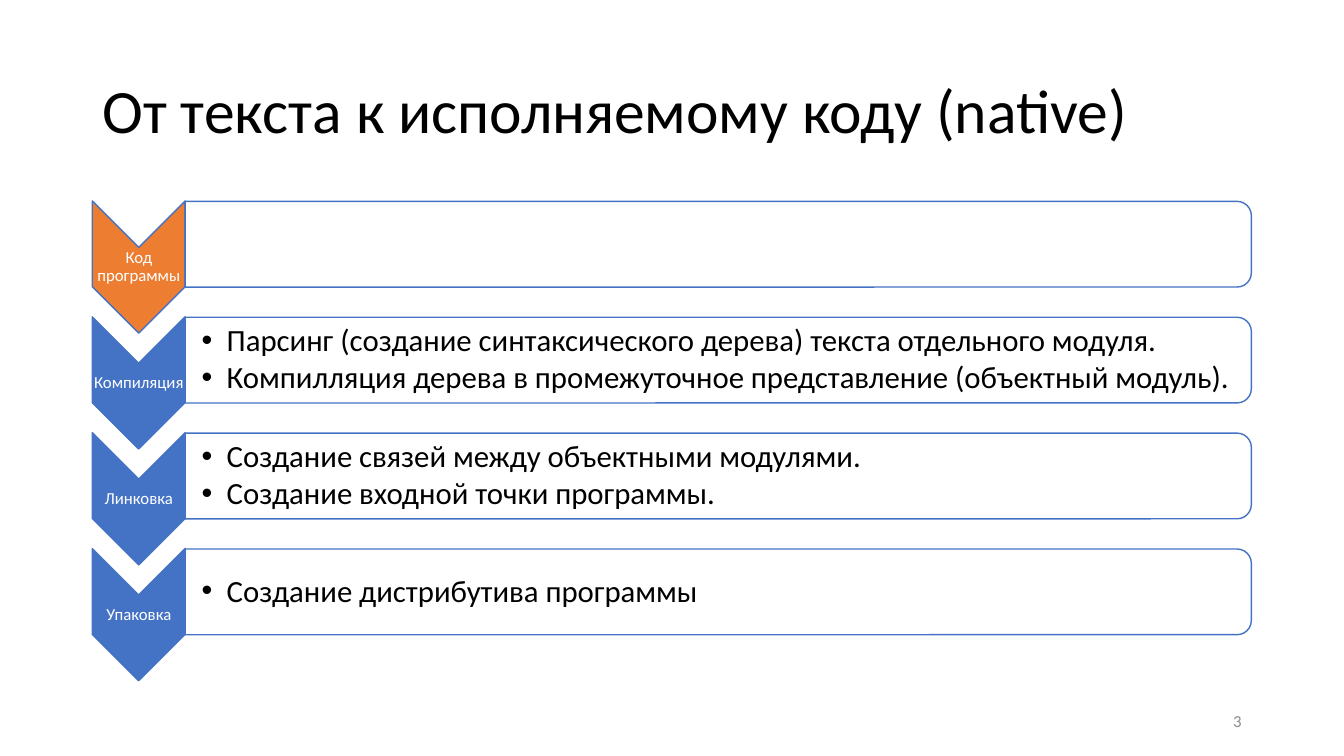
from lxml import etree
from pptx import Presentation
from pptx import util as u
from pptx.dml.color import RGBColor
from pptx.enum import shapes, text
from pptx.oxml import ns

COLORS = {"code": "ED7D31", "stage": "4472C4", "panel": "FFFFFF",
          "ink": "000000", "light": "FFFFFF", "number": "8C8C8C"}
STAGES = [
    ("Код программы", "code", []),
    ("Компиляция", "stage", [
        "Парсинг (создание синтаксического дерева) текста отдельного модуля.",
        "Компилляция дерева в промежуточное представление (объектный модуль)."]),
    ("Линковка", "stage", [
        "Создание связей между объектными модулями.",
        "Создание входной точки программы."]),
    ("Упаковка", "stage", ["Создание дистрибутива программы"]),
]
PITCH = 2.92


class StageSlide:
    """Draws the titled chain of build stages on one slide."""

    def __init__(self, deck):
        self.slide = deck.slides.add_slide(deck.slide_layouts[6])
        self.font = "Calibri"

    def color(self, key):
        return RGBColor.from_string(COLORS[key])

    def block(self, preset, box, fill, opacity=100):
        block = self.slide.shapes.add_shape(preset, *map(u.Cm, box))
        block.rotation = 90
        block.shadow.inherit = False
        block.fill.solid()
        block.fill.fore_color.rgb = self.color(fill)
        block.line.color.rgb = self.color("stage")
        block.line.width = u.Pt(1)
        if opacity < 100:
            tint = block.fill._xPr.find(".//" + ns.qn("a:srgbClr"))
            etree.SubElement(tint, ns.qn("a:alpha"), val=str(opacity * 1000))

    def words(self, box, lines, size, color, align=text.PP_ALIGN.LEFT,
              insets=(0.25, 0.13, 0.25, 0.13), spacing=0.9, after=0, bullet=False):
        frame = self.slide.shapes.add_textbox(*map(u.Cm, box)).text_frame
        left, top, right, bottom = map(u.Cm, insets)
        frame_format = {"word_wrap": True, "vertical_anchor": text.MSO_ANCHOR.MIDDLE,
                        "margin_left": left, "margin_top": top,
                        "margin_right": right, "margin_bottom": bottom}
        for name, value in frame_format.items():
            setattr(frame, name, value)
        frame.text = "\n".join(lines)
        line_format = {"alignment": align, "line_spacing": spacing,
                       "space_after": u.Pt(after), "level": int(bullet)}
        for line in frame.paragraphs:
            for name, value in line_format.items():
                setattr(line, name, value)
            for run in line.runs:
                run.font.name = self.font
                run.font.size = u.Pt(size)
                run.font.color.rgb = self.color(color)
            if bullet:
                properties = line._p.get_or_add_pPr()
                properties.set("marL", str(u.Cm(0.635)))
                properties.set("indent", str(-u.Cm(0.635)))
                etree.SubElement(properties, ns.qn("a:buFont"), typeface="Arial")
                etree.SubElement(properties, ns.qn("a:buChar"), char="•")

    def stage(self, row, label, fill, tasks):
        shift = row * PITCH
        self.block(shapes.MSO_SHAPE.CHEVRON, (1.83, 5.56 + shift, 3.33, 2.34), fill)
        self.words((2.33, 6.24 + shift, 2.34, 0.99), [label], 12, "light",
                   text.PP_ALIGN.CENTER, insets=(0.02,) * 4)
        self.block(shapes.MSO_SHAPE.ROUND_2_SAME_RECTANGLE,
                   (17.02, -7.28 + shift, 2.16, 26.87), "panel", opacity=90)
        if tasks:
            self.words((4.65, 5.18 + shift, 26.77, 1.96), tasks, 22, "ink",
                       insets=(0.43, 0.05, 0.05, 0.05), after=3, bullet=True)


def main():
    deck = Presentation()
    deck.slide_width, deck.slide_height = u.Cm(33.87), u.Cm(19.05)
    page = StageSlide(deck)
    page.words((2.33, 1.01, 29.21, 3.68),
               ["От текста к исполняемому коду (native)"], 44, "ink")
    for row, (label, fill, tasks) in enumerate(STAGES):
        page.stage(row, label, fill, tasks)
    page.words((23.92, 17.66, 7.62, 1.01), ["3"], 12, "number",
               text.PP_ALIGN.RIGHT, spacing=1.0)
    deck.save("out.pptx")


if __name__ == "__main__":
    main()
